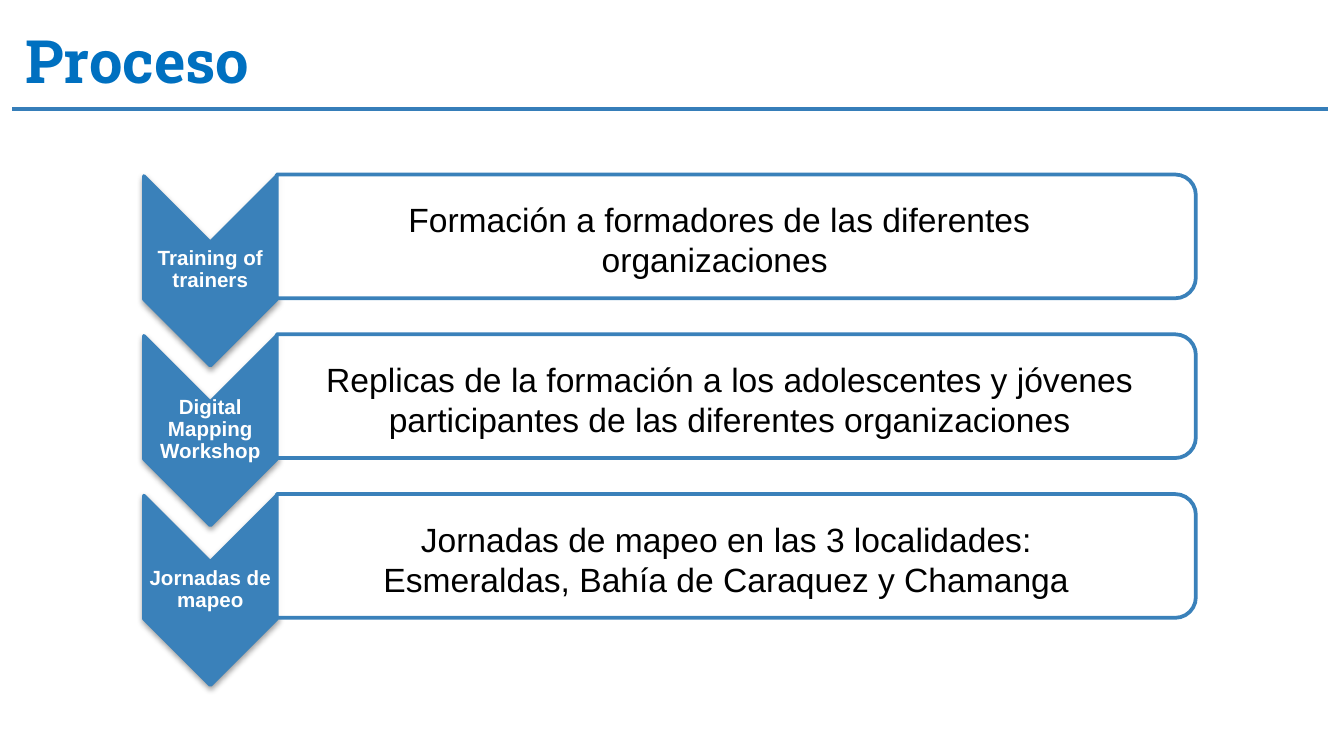
from lxml import etree
from pptx import Presentation
from pptx.dml.color import RGBColor
from pptx.enum import shapes, text
from pptx.oxml import ns
from pptx.util import Cm, Pt

TITLE = "Proceso"
CENTER, LEFT = text.PP_ALIGN.CENTER, text.PP_ALIGN.LEFT

# Each step: chevron label, description left and width (cm), aligned lines
STEPS = [
    ("Training of trainers", 7.47, 12.55,
     [("Formación a formadores de las diferentes", LEFT),
      ("organizaciones ", CENTER)]),
    ("Digital Mapping Workshop", 5.84, 15.9,
     [("Replicas de la formación a los adolescentes y jóvenes", CENTER),
      ("participantes de las diferentes organizaciones", CENTER)]),
    ("Jornadas de mapeo", 6.93, 13.59,
     [("Jornadas de mapeo en las 3 localidades:", CENTER),
      ("Esmeraldas, Bahía de Caraquez y Chamanga", CENTER)]),
]


class Theme:
    title, rule, step = "0070C0", "367EB9", "3A81BA"
    white, black = "FFFFFF", "000000"
    title_font, body_font = "Roboto Slab", "Arial"
    title_size, label_size, body_size = 32, 11, 18
    rule_width, outline_width = 2.25, 2


STEP_PITCH = 3.02
CHEVRON_LENGTH, CHEVRON_BREADTH = 3.58, 2.51
CHEVRON_LEFT, CHEVRON_TOP = 2.72, 3.33
PANEL_LEFT, PANEL_TOP = CHEVRON_LEFT + CHEVRON_BREADTH, 3.3
PANEL_WIDTH, PANEL_HEIGHT = 17.37, 2.34
LABEL_TOP, LABEL_HEIGHT = 4.57, 1.07
DESCRIPTION_TOP, DESCRIPTION_HEIGHT = 3.63, 1.8


def color(value):
    return RGBColor.from_string(value)


def add_effects(shape, shadow=False):
    """Replace inherited effects with none, or with a soft shadow below."""
    properties = shape._element.spPr
    for old in properties.findall(ns.qn("a:effectLst")):
        properties.remove(old)
    effects = etree.SubElement(properties, ns.qn("a:effectLst"))
    if shadow:
        outer = etree.SubElement(effects, ns.qn("a:outerShdw"), blurRad="40000",
                                 dist="20000", dir="5400000", rotWithShape="0")
        tint = etree.SubElement(outer, ns.qn("a:srgbClr"), val=Theme.black)
        etree.SubElement(tint, ns.qn("a:alpha"), val="38000")


def add_turned_shape(slide, kind, left, top, width, height, fill):
    """Add a shape turned 90 degrees; the box given is the one seen."""
    center_x, center_y = left + width / 2, top + height / 2
    shape = slide.shapes.add_shape(
        kind, Cm(center_x - height / 2), Cm(center_y - width / 2), Cm(height), Cm(width))
    shape.rotation = 90
    shape.fill.solid()
    shape.fill.fore_color.rgb = color(fill)
    shape.line.color.rgb = color(Theme.step)
    shape.line.width = Pt(Theme.outline_width)
    return shape


def add_text(slide, box, lines, font, size, ink, bold=False, inset=0.25,
             anchor=text.MSO_ANCHOR.TOP, spacing=None):
    shape = slide.shapes.add_textbox(*map(Cm, box))
    frame = shape.text_frame
    frame.word_wrap = True
    frame.vertical_anchor = anchor
    frame.margin_left = frame.margin_right = Cm(inset)
    frame.margin_top = frame.margin_bottom = Cm(min(inset, 0.13))
    for index, (line, alignment) in enumerate(lines):
        paragraph = frame.add_paragraph() if index else frame.paragraphs[0]
        paragraph.alignment = alignment
        if spacing:
            paragraph.line_spacing = spacing
        run = paragraph.add_run()
        run.text = line
        run.font.name, run.font.size, run.font.bold = font, Pt(size), bold
        run.font.color.rgb = color(ink)
    return frame


def add_header(slide):
    frame = add_text(slide, (0.23, 0.25, 21.59, 1.8), [(TITLE, LEFT)], Theme.title_font,
                     Theme.title_size, Theme.title, bold=True,
                     anchor=text.MSO_ANCHOR.BOTTOM)
    frame.margin_top = frame.margin_bottom = Cm(0.25)
    rule = slide.shapes.add_connector(
        shapes.MSO_CONNECTOR.STRAIGHT, Cm(0.23), Cm(2.06), Cm(25.1), Cm(2.06))
    rule.line.color.rgb = color(Theme.rule)
    rule.line.width = Pt(Theme.rule_width)
    add_effects(rule)


def add_step(slide, label, offset):
    chevron = add_turned_shape(
        slide, shapes.MSO_SHAPE.CHEVRON, CHEVRON_LEFT, CHEVRON_TOP + offset,
        CHEVRON_BREADTH, CHEVRON_LENGTH, Theme.step)
    add_effects(chevron, shadow=True)
    add_text(slide, (CHEVRON_LEFT, LABEL_TOP + offset, CHEVRON_BREADTH, LABEL_HEIGHT),
             [(label, CENTER)], Theme.body_font, Theme.label_size, Theme.white,
             bold=True, inset=0.02, anchor=text.MSO_ANCHOR.MIDDLE, spacing=0.9)
    panel = add_turned_shape(
        slide, shapes.MSO_SHAPE.ROUND_2_SAME_RECTANGLE, PANEL_LEFT, PANEL_TOP + offset,
        PANEL_WIDTH, PANEL_HEIGHT, Theme.white)
    add_effects(panel)
    tint = panel._element.spPr.find(ns.qn("a:solidFill"))[0]
    etree.SubElement(tint, ns.qn("a:alpha"), val="90000")


def add_description(slide, left, width, lines, offset):
    frame = add_text(slide, (left, DESCRIPTION_TOP + offset, width, DESCRIPTION_HEIGHT),
                     lines, Theme.body_font, Theme.body_size, Theme.black)
    frame.word_wrap = False
    frame.auto_size = text.MSO_AUTO_SIZE.SHAPE_TO_FIT_TEXT


def main():
    presentation = Presentation()
    presentation.slide_width, presentation.slide_height = Cm(25.4), Cm(14.29)
    slide = presentation.slides.add_slide(presentation.slide_layouts[6])
    add_header(slide)
    for index, (label, *_) in enumerate(STEPS):
        add_step(slide, label, index * STEP_PITCH)
    for index, (_, left, width, lines) in enumerate(STEPS):
        add_description(slide, left, width, lines, index * STEP_PITCH)
    presentation.save("out.pptx")


if __name__ == "__main__":
    main()
